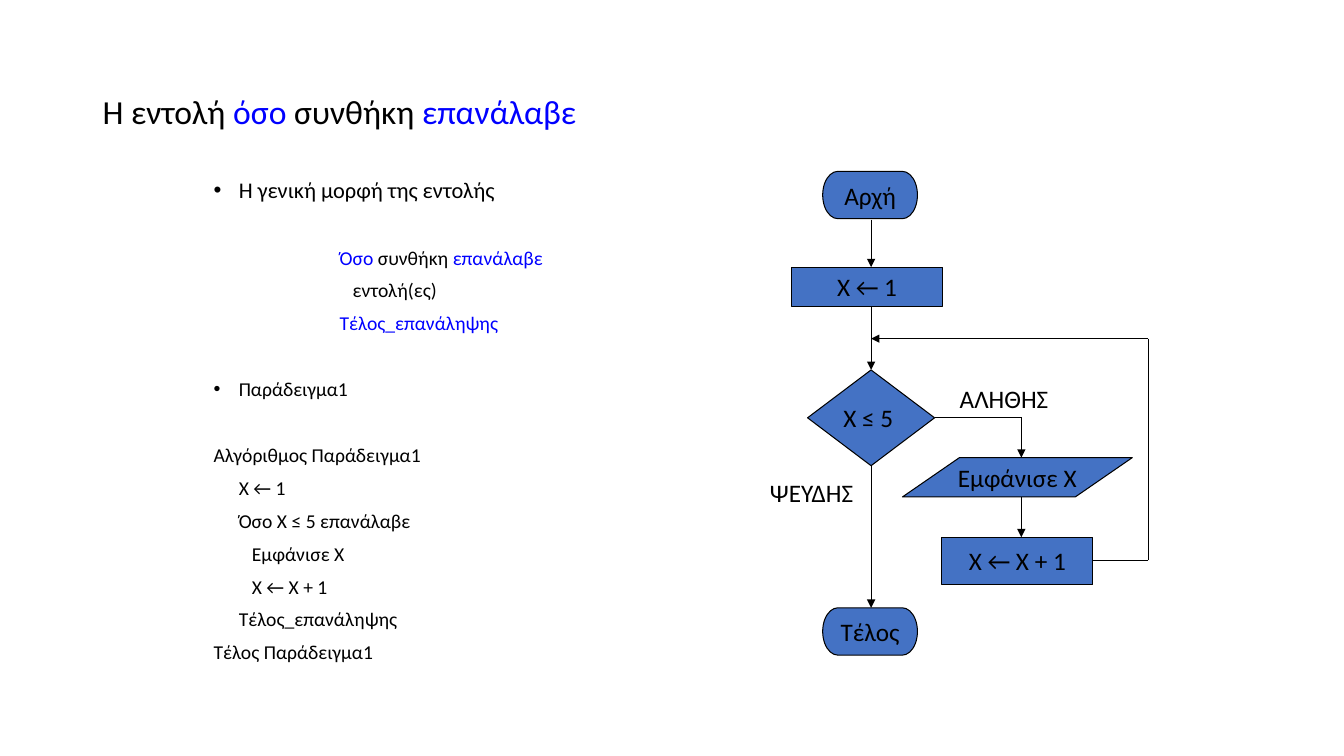
from itertools import pairwise
from pptx import Presentation
from pptx.dml.color import RGBColor
from pptx.enum.shapes import MSO_CONNECTOR as Link, MSO_SHAPE as Shape
from pptx.enum.text import MSO_ANCHOR as Anchor, PP_ALIGN as Align
from pptx.oxml.ns import qn
from pptx.util import Inches, Pt
from lxml.etree import SubElement

BLACK, BLUE, FILL = "000000", "0000FF", "4472C4"
AXIS, SIDE, BACK = 8.64, 10.13, 11.39
GAP, SKIP = 10, 33.7


def paint(item, tint):
    item.rgb = RGBColor.from_string(tint)


def style(para, size, align=Align.LEFT):
    para.alignment = align
    para.font.size = Pt(size)
    para.font.name = "Calibri"


def write(para, parts):
    for text, tint in parts:
        run = para.add_run()
        run.text = text
        run.font.fill.solid()
        paint(run.font.fill.fore_color, tint)


def add_box(slide, left, top, width, height):
    box = slide.shapes.add_textbox(*map(Inches, (left, top, width, height)))
    box.text_frame.word_wrap = True
    return box.text_frame


def add_title(slide, parts):
    frame = add_box(slide, 0.92, 0.4, 11.5, 1.45)
    frame.vertical_anchor = Anchor.MIDDLE
    para = frame.paragraphs[0]
    para.line_spacing = 0.9
    style(para, 24)
    write(para, parts)


def add_body(slide, rows):
    frame = add_box(slide, 2.02, 1.75, 4.8, 4.95)
    for i, (size, gap, left, mark, parts) in enumerate(rows):
        para = frame.add_paragraph() if i else frame.paragraphs[0]
        props = para._p.get_or_add_pPr()
        props.set("marL", str(Inches(left)))
        props.set("indent", str(Inches(-left if mark else 0)))
        if mark:
            SubElement(props, qn("a:buFont"), typeface="Arial")
            SubElement(props, qn("a:buChar"), char="•")
        para.line_spacing = 0.8
        para.space_before = Pt(gap)
        style(para, size)
        write(para, parts)


def add_node(slide, kind, left, top, width, height, text, slant=None):
    node = slide.shapes.add_shape(
        kind, *map(Inches, (left, top, width, height)))
    if slant is not None:
        node.adjustments[0] = slant
    node.shadow.inherit = False
    node.fill.solid()
    paint(node.fill.fore_color, FILL)
    paint(node.line.color, BLACK)
    node.line.width = Pt(0.75)
    frame = node.text_frame
    frame.word_wrap = False
    frame.vertical_anchor = Anchor.MIDDLE
    para = frame.paragraphs[0]
    style(para, 18, Align.CENTER)
    write(para, [(text, BLACK)])


def add_label(slide, left, top, width, text, align):
    para = add_box(slide, left, top, width, 0.4).paragraphs[0]
    style(para, 18, align)
    write(para, [(text, BLACK)])


def add_route(slide, *points):
    for start, end in pairwise(points):
        line = slide.shapes.add_connector(
            Link.STRAIGHT, *map(Inches, start + end))
        paint(line.line.color, BLACK)
        line.line.width = Pt(0.75)
        props = line._element.spPr
        if end == points[-1]:
            SubElement(props.find(qn("a:ln")), qn("a:tailEnd"),
                       type="triangle")
        SubElement(props, qn("a:effectLst"))


def add_chart(slide):
    add_node(slide, Shape.FLOWCHART_TERMINATOR, 8.16, 1.7, 0.94, 0.47, "Αρχή")
    add_node(slide, Shape.PARALLELOGRAM, 7.85, 2.65, 1.5, 0.39, "X ← 1", 0)
    add_node(slide, Shape.FLOWCHART_TERMINATOR, 8.16, 6.03, 0.94, 0.47, "Τέλος")
    add_node(slide, Shape.PARALLELOGRAM, 8.95, 4.54, 2.28, 0.39,
             "Εμφάνισε Χ", 1.45)
    add_node(slide, Shape.FLOWCHART_DECISION, 8.01, 3.67, 1.26, 0.95, "X ≤ 5 ")
    add_node(slide, Shape.FLOWCHART_PROCESS, 9.34, 5.33, 1.5, 0.47, "Χ ← Χ + 1")
    for top, end in [(2.18, 2.65), (3.04, 3.67), (4.62, 6.03)]:
        add_route(slide, (AXIS, top), (AXIS, end))
    add_route(slide, (9.27, 4.14), (SIDE, 4.14), (SIDE, 4.54))
    add_route(slide, (SIDE, 4.93), (SIDE, 5.33))
    add_route(slide, (10.84, 5.56), (BACK, 5.56), (BACK, 3.36), (AXIS, 3.36))
    add_label(slide, 9.42, 3.75, 1.42, "ΑΛΗΘΗΣ", Align.LEFT)
    add_label(slide, 7.22, 4.69, 1.34, "ΨΕΥΔΗΣ", Align.RIGHT)


def main():
    deck = Presentation()
    deck.slide_width, deck.slide_height = Inches(13.33), Inches(7.5)
    slide = deck.slides.add_slide(deck.slide_layouts[6])
    add_title(slide, [("Η εντολή ", BLACK), ("όσο", BLUE),
                      (" συνθήκη ", BLACK), ("επανάλαβε", BLUE)])
    code = [
        (SKIP, 0, "Αλγόριθμος Παράδειγμα1"),
        (GAP, 0.25, "Χ ← 1"),
        (GAP, 0.25, "Όσο Χ ≤ 5 επανάλαβε"),
        (GAP, 0.38, "Εμφάνισε Χ"),
        (GAP, 0.38, "Χ ← Χ + 1"),
        (GAP, 0.25, "Τέλος_επανάληψης"),
        (GAP, 0, "Τέλος Παράδειγμα1"),
    ]
    add_body(slide, [
        (16, 0, 0.25, True, [("Η γενική μορφή της εντολής", BLACK)]),
        (14, SKIP, 1.25, False, [("Όσο", BLUE), (" συνθήκη ", BLACK),
                                 ("επανάλαβε", BLUE)]),
        (14, GAP, 1.38, False, [("εντολή(ες)", BLACK)]),
        (14, GAP, 1.25, False, [("Τέλος_επανάληψης", BLUE)]),
        (14, SKIP, 0.25, True, [("Παράδειγμα1", BLACK)]),
        *[(14, gap, left, False, [(text, BLACK)]) for gap, left, text in code],
    ])
    add_chart(slide)
    deck.save("out.pptx")


if __name__ == "__main__":
    main()
